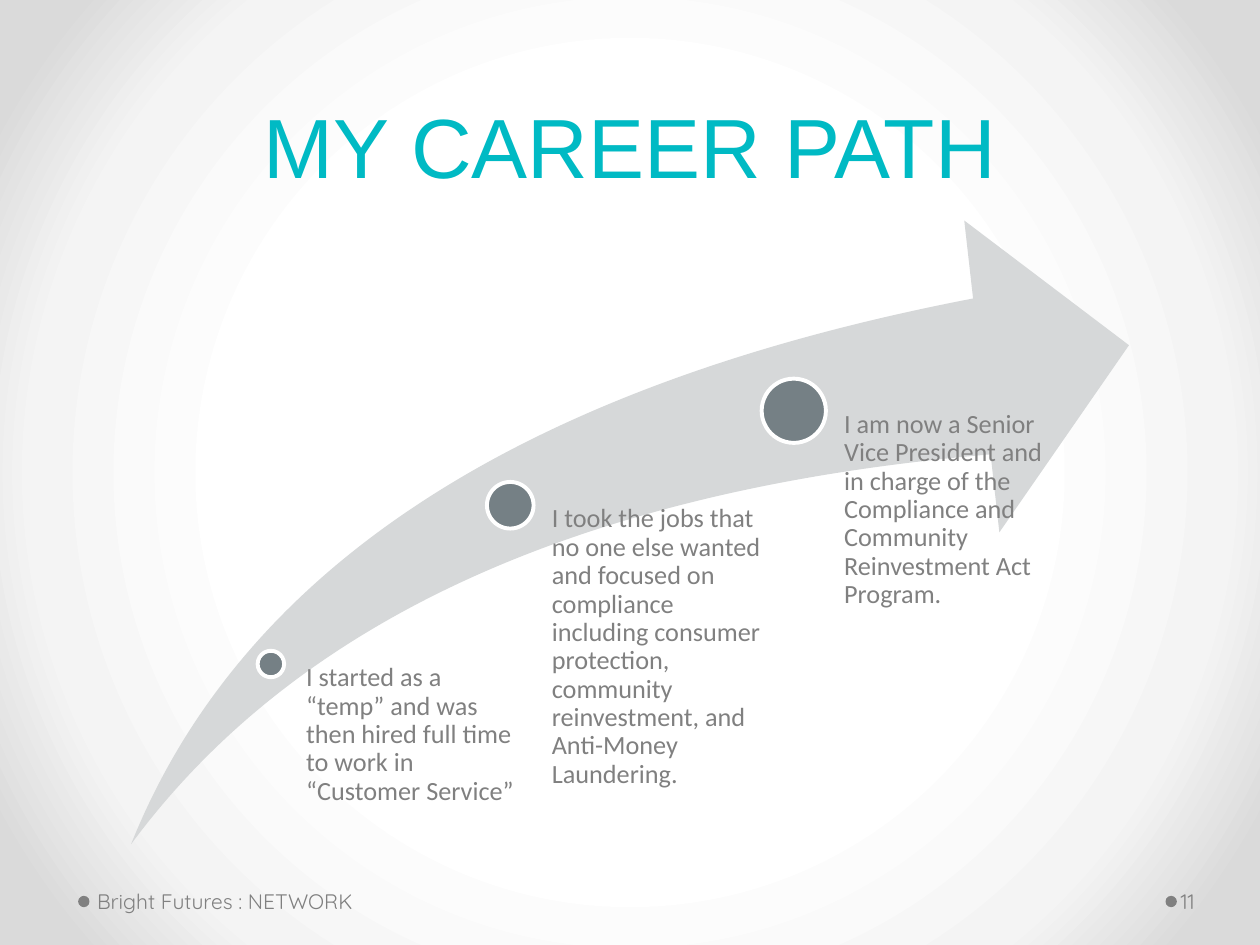
from pptx import Presentation
from pptx.dml.color import RGBColor
from pptx.enum.shapes import MSO_SHAPE as Shape
from pptx.enum.text import MSO_ANCHOR as Anchor, PP_ALIGN as Align
from pptx.oxml import parse_xml
from pptx.oxml.ns import nsdecls
from pptx.util import Inches, Pt

COLUMNS, ROWS = 100, 75
TITLE_ONLY = 5
COLORS = {
    "title": "00BAC4",
    "text": "808080",
    "arrow": "D6D8D9",
    "dot": "758085",
    "white": "FFFFFF",
    "mist": "F4F4F4",
    "edge": "DADADA",
}


def rgb(name):
    return RGBColor.from_string(COLORS[name])


def write(frame, text, *, font, size, color="text", align=Align.LEFT,
          anchor=Anchor.TOP, spacing=None, insets=(0.1, 0.05, 0.1, 0.05)):
    """Fill a text frame with one formatted paragraph."""
    frame.word_wrap = True
    frame.vertical_anchor = anchor
    (frame.margin_left, frame.margin_top,
     frame.margin_right, frame.margin_bottom) = map(Inches, insets)
    para = frame.paragraphs[0]
    para.alignment = align
    para.line_spacing = spacing
    span = para.add_run()
    span.text = text
    span.font.name = font
    span.font.size = Pt(size)
    span.font.color.rgb = rgb(color)


class Composer:
    """Places elements on the current slide by grid columns and rows."""

    def __init__(self, deck):
        self.page = deck.slides.add_slide(deck.slide_layouts[TITLE_ONLY])
        self.column = deck.slide_width / COLUMNS
        self.row = deck.slide_height / ROWS

    def area(self, left, top, width, height):
        return (round(left * self.column), round(top * self.row),
                round(width * self.column), round(height * self.row))

    def background(self, stops):
        """Radial gradient from the centre; stops are (percent, colour)."""
        self.page.background.fill.solid()
        marks = "".join(
            f'<a:gs pos="{percent * 1000}"><a:srgbClr val="{COLORS[name]}"/></a:gs>'
            for percent, name in stops)
        gradient = parse_xml(
            f'<a:gradFill {nsdecls("a")} rotWithShape="1"><a:gsLst>{marks}</a:gsLst>'
            '<a:path path="circle"><a:fillToRect l="50000" t="50000" r="50000" b="50000"/>'
            '</a:path></a:gradFill>')
        solid = self.page.element.find(".//" + "{*}bgPr/{*}solidFill")
        solid.getparent().replace(solid, gradient)

    def title(self, text, *area, **style):
        holder = self.page.shapes.title
        holder.left, holder.top, holder.width, holder.height = self.area(*area)
        write(holder.text_frame, text, **style)

    def shape(self, kind, *area, fill, outline=None):
        shape = self.page.shapes.add_shape(kind, *self.area(*area))
        shape.shadow.inherit = False
        shape.fill.solid()
        shape.fill.fore_color.rgb = rgb(fill)
        if outline:
            shape.line.color.rgb = rgb(outline)
            shape.line.width = Pt(2.25)
        else:
            shape.line.fill.background()
        return shape

    def dot(self, x, y, size, **style):
        """A circle centred on x, y."""
        self.shape(Shape.OVAL, x - size / 2, y - size / 2, size, size, **style)

    def text(self, text, *area, **style):
        box = self.page.shapes.add_textbox(*self.area(*area))
        write(box.text_frame, text, **style)


# Centre column and row, dot size, text column, text width, text
MILESTONES = [
    (21.5, 52.7, 2.1, 23.2, 18.5,
     "I started as a “temp” and was then hired full time to work in "
     "“Customer Service”"),
    (40.5, 40.1, 3.7, 41.8, 19,
     "I took the jobs that no one else wanted and focused on compliance "
     "including consumer protection, community reinvestment, and "
     "Anti-Money Laundering."),
    (63, 32.6, 5.1, 64.3, 19,
     "I am now a Senior Vice President and in charge of the Compliance and "
     "Community Reinvestment Act Program."),
]
ARROW_BOTTOM = 67

# Text column, width, left inset, dot column, text
FOOTERS = [
    (7.2, 31.1, 0.05, 6.65, "Bright Futures : NETWORK"),
    (93.4, 6.1, 0.03, 92.95, "11"),
]


def main():
    deck = Presentation()
    deck.slide_width, deck.slide_height = Inches(10), Inches(7.5)
    slide = Composer(deck)
    slide.background([(50, "white"), (76, "mist"), (92, "edge")])

    # Title
    slide.title("MY CAREER PATH", 5, 1.5, 90, 14.5, font="Arial", size=48,
                color="title", align=Align.CENTER, anchor=Anchor.BOTTOM,
                spacing=Pt(58))

    # Rising arrow
    arrow = slide.shape(Shape.SWOOSH_ARROW, 10.4, 17.5, 79.2, 49.5, fill="arrow")
    arrow.adjustments[0] = arrow.adjustments[1] = 0.25

    # Milestones: each text starts level with its dot's centre
    for x, y, size, left, width, text in MILESTONES:
        slide.dot(x, y, size, fill="dot", outline="white")
        slide.text(text, left, y, width, ARROW_BOTTOM - y, font="Calibri",
                   size=15, spacing=0.9, insets=(round(size * 0.053, 2), 0, 0, 0))

    # Footer and page number
    for left, width, inset, dot, text in FOOTERS:
        slide.dot(dot, 71.55, 0.9, fill="text")
        slide.text(text, left, 69.5, width, 4, font="Quicksand", size=12,
                   anchor=Anchor.MIDDLE, insets=(inset, 0.05, 0.05, 0.05))

    deck.save("out.pptx")


if __name__ == "__main__":
    main()
